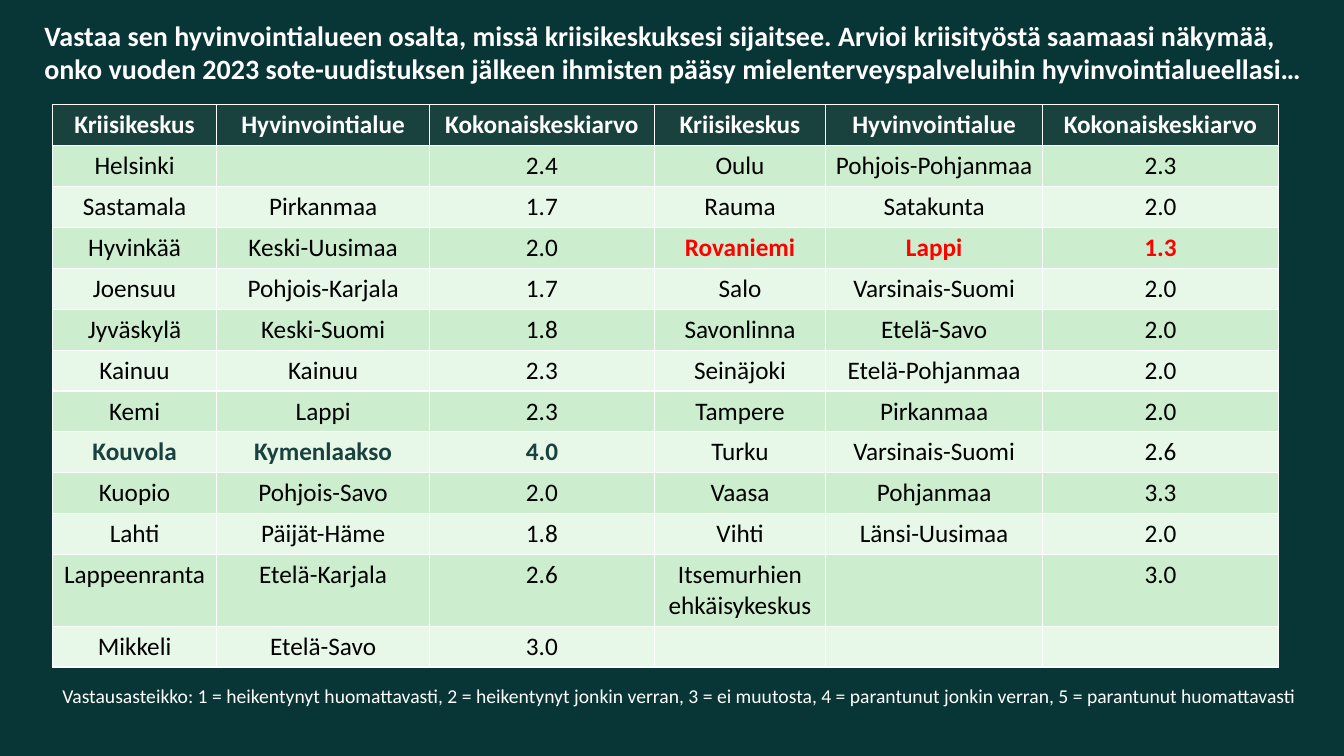
"""Build a slide with a table of crisis centre averages by wellbeing services county."""
from pptx import Presentation
from pptx.dml.color import RGBColor
from pptx.enum.text import MSO_ANCHOR, MSO_AUTO_SIZE, PP_ALIGN
from pptx.util import Inches, Pt

TITLE = (
    "Vastaa sen hyvinvointialueen osalta, missä kriisikeskuksesi sijaitsee. "
    "Arvioi kriisityöstä saamaasi näkymää, onko vuoden 2023 sote-uudistuksen jälkeen "
    "ihmisten pääsy mielenterveyspalveluihin hyvinvointialueellasi…"
)
SCALE = (
    "Vastausasteikko: 1 = heikentynyt huomattavasti, 2 = heikentynyt jonkin verran, "
    "3 = ei muutosta, 4 = parantunut jonkin verran, 5 = parantunut huomattavasti"
)
HEADINGS = ("Kriisikeskus", "Hyvinvointialue", "Kokonaiskeskiarvo")
CENTRES = [
    ("Helsinki", "", "2.4"),
    ("Sastamala", "Pirkanmaa", "1.7"),
    ("Hyvinkää", "Keski-Uusimaa", "2.0"),
    ("Joensuu", "Pohjois-Karjala", "1.7"),
    ("Jyväskylä", "Keski-Suomi", "1.8"),
    ("Kainuu", "Kainuu", "2.3"),
    ("Kemi", "Lappi", "2.3"),
    ("Kouvola", "Kymenlaakso", "4.0"),
    ("Kuopio", "Pohjois-Savo", "2.0"),
    ("Lahti", "Päijät-Häme", "1.8"),
    ("Lappeenranta", "Etelä-Karjala", "2.6"),
    ("Mikkeli", "Etelä-Savo", "3.0"),
    ("Oulu", "Pohjois-Pohjanmaa", "2.3"),
    ("Rauma", "Satakunta", "2.0"),
    ("Rovaniemi", "Lappi", "1.3"),
    ("Salo", "Varsinais-Suomi", "2.0"),
    ("Savonlinna", "Etelä-Savo", "2.0"),
    ("Seinäjoki", "Etelä-Pohjanmaa", "2.0"),
    ("Tampere", "Pirkanmaa", "2.0"),
    ("Turku", "Varsinais-Suomi", "2.6"),
    ("Vaasa", "Pohjanmaa", "3.3"),
    ("Vihti", "Länsi-Uusimaa", "2.0"),
    ("Itsemurhien ehkäisykeskus", "", "3.0"),
    ("", "", ""),
]
HIGHLIGHTS = {"Kouvola": "19413D", "Rovaniemi": "FF0000"}
COLUMN_WIDTHS = (1.63, 2.11, 2.23, 1.7, 2.15, 2.34)
HEADER_FILL = "19413D"
BAND_FILLS = ("E7F7E8", "CCEECE")


def color(value):
    return RGBColor.from_string(value)


def style(paragraph, size, text_color, bold=False, align=PP_ALIGN.LEFT):
    paragraph.alignment = align
    font = paragraph.font
    font.name = "Calibri"
    font.size = Pt(size)
    font.bold = bold
    font.color.rgb = color(text_color)


def fill_box(box, text, size, bold=False):
    frame = box.text_frame
    frame.word_wrap = True
    frame.auto_size = MSO_AUTO_SIZE.NONE
    frame.vertical_anchor = MSO_ANCHOR.TOP
    frame.text = text
    style(frame.paragraphs[0], size, "FFFFFF", bold)


def fill_cell(cell, text, fill, text_color, bold):
    cell.fill.solid()
    cell.fill.fore_color.rgb = color(fill)
    cell.text = text
    style(cell.text_frame.paragraphs[0], 18, text_color, bold, PP_ALIGN.CENTER)


def add_centre_table(page):
    half = len(CENTRES) // 2
    table = page.shapes.add_table(
        half + 1, len(COLUMN_WIDTHS),
        Inches(0.52), Inches(1.04), Inches(12.16), Inches(5.27),
    ).table
    for column, width in zip(table.columns, COLUMN_WIDTHS):
        column.width = Inches(width)
    for side, centres in enumerate((CENTRES[:half], CENTRES[half:])):
        for row, values in enumerate([HEADINGS, *centres]):
            highlight = HIGHLIGHTS.get(values[0])
            fill = BAND_FILLS[row % 2] if row else HEADER_FILL
            text_color = (highlight or "000000") if row else "FFFFFF"
            bold = row == 0 or highlight is not None
            for offset, text in enumerate(values):
                cell = table.cell(row, side * len(HEADINGS) + offset)
                fill_cell(cell, text, fill, text_color, bold)


def main():
    deck = Presentation()
    deck.slide_width, deck.slide_height = Inches(13.33), Inches(7.5)
    page = deck.slides.add_slide(deck.slide_layouts[5])
    page.background.fill.solid()
    page.background.fill.fore_color.rgb = color("083535")

    add_centre_table(page)

    title = page.shapes.title
    title.left, title.top = Inches(0.34), Inches(0.13)
    title.width, title.height = Inches(12.81), Inches(1.11)
    fill_box(title, TITLE, 20, bold=True)

    scale = page.shapes.add_textbox(Inches(0.52), Inches(6.74), Inches(12.63), Inches(0.34))
    fill_box(scale, SCALE, 14)

    deck.save("out.pptx")


if __name__ == "__main__":
    main()
